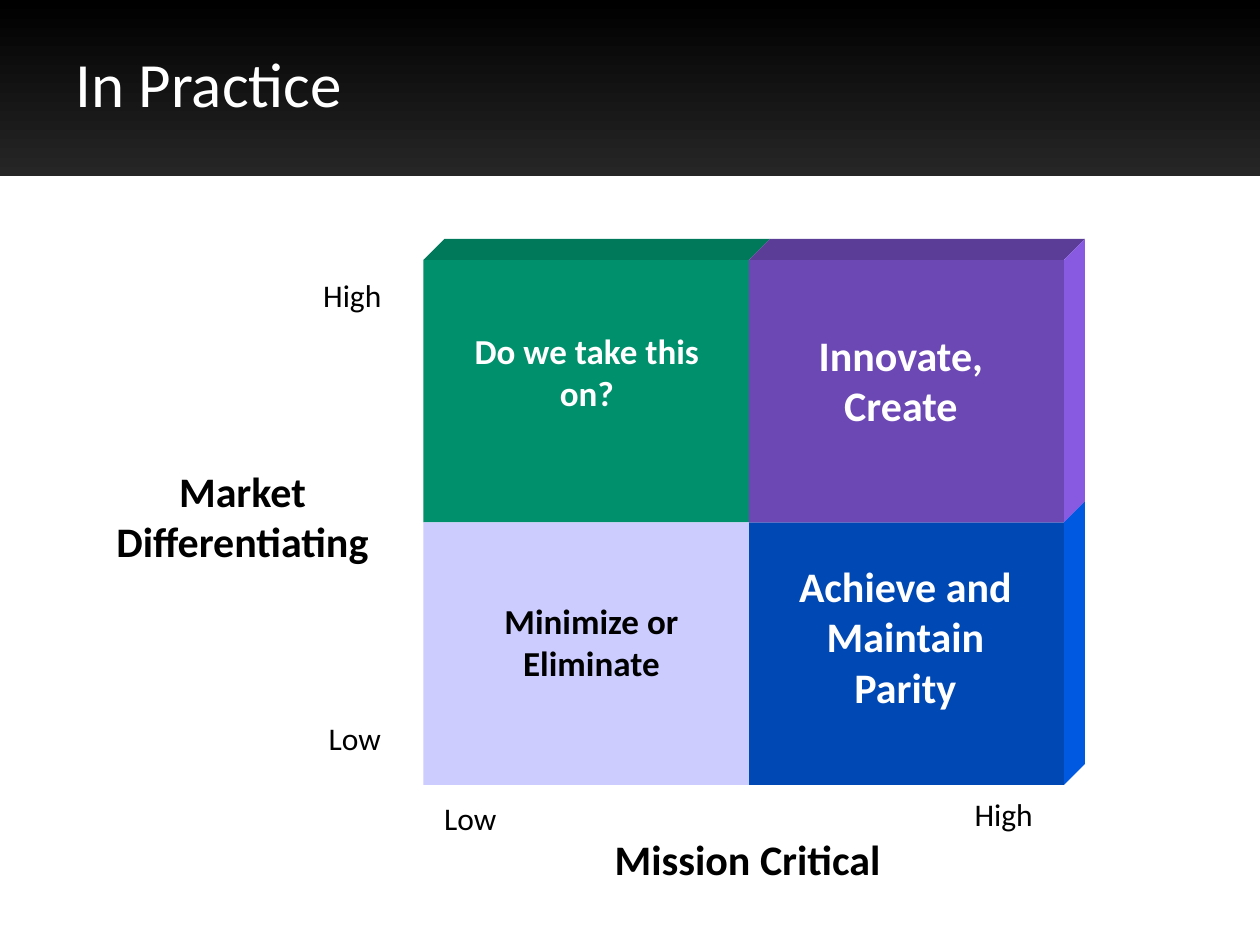
from lxml import etree
from pptx import Presentation
from pptx.dml.color import RGBColor
from pptx.enum.shapes import MSO_SHAPE as SHAPE
from pptx.enum.text import MSO_ANCHOR as ANCHOR, MSO_AUTO_SIZE as AUTO, PP_ALIGN as ALIGN
from pptx.oxml.ns import qn
from pptx.util import Pt

FONT = "Calibri"
BLACK = RGBColor(0x00, 0x00, 0x00)
WHITE = RGBColor(0xFF, 0xFF, 0xFF)
CHARCOAL = RGBColor(0x26, 0x26, 0x26)
GREEN = RGBColor(0x00, 0x90, 0x6C)
GREEN_TOP = RGBColor(0x00, 0x79, 0x5B)
PURPLE = RGBColor(0x6C, 0x48, 0xB4)
PURPLE_TOP = RGBColor(0x5B, 0x3C, 0x97)
PURPLE_SIDE = RGBColor(0x87, 0x5A, 0xE1)
BLUE = RGBColor(0x00, 0x48, 0xB4)
BLUE_SIDE = RGBColor(0x00, 0x5A, 0xE1)
LILAC = RGBColor(0xCC, 0xCC, 0xFF)

# Matrix edges and depth, in points
LEFT, CENTER, RIGHT = 242, 428, 608
TOP, MIDDLE, BOTTOM = 148.5, 298.5, 448.5
DEPTH = 12


def paint(sp, color):
    sp.shadow.inherit = False
    sp.fill.solid()
    sp.fill.fore_color.rgb = color
    sp.line.fill.background()


def write(tf, lines, size, color, bold, align):
    for i, line in enumerate(lines):
        p = tf.paragraphs[0] if i == 0 else tf.add_paragraph()
        p.alignment = align
        r = p.add_run()
        r.text = line
        r.font.name = FONT
        r.font.size = Pt(size)
        r.font.bold = bold
        r.font.color.rgb = color


prs = Presentation()
prs.slide_width, prs.slide_height = Pt(720), Pt(540)
s = prs.slides.add_slide(prs.slide_layouts[5])

# Title on its dark band
band = s.shapes.add_shape(SHAPE.RECTANGLE, 0, 0, Pt(720), Pt(100.8))
paint(band, BLACK)
band.fill.gradient()
band.fill.gradient_angle = 270
for stop, position, color in zip(band.fill.gradient_stops, (0, 1), (BLACK, CHARCOAL)):
    stop.position = position
    stop.color.rgb = color
s.shapes._spTree.insert(2, band._element)

title = s.shapes.title
title.left, title.top, title.width, title.height = Pt(36), Pt(21.6), Pt(648), Pt(90)
title.text_frame.vertical_anchor = ANCHOR.TOP
title.text_frame.auto_size = AUTO.NONE
write(title.text_frame, ["In Practice"], 36, WHITE, False, ALIGN.LEFT)

# Axis titles on translucent white: left, top, width, height, lines, alignment, opacity %
axis_titles = [
    (50, 262.5, 177.1, 65, ["Market", "Differentiating"], ALIGN.CENTER, 48),
    (344.2, 472.6, 191.5, 36, ["Mission Critical"], ALIGN.LEFT, 41),
]
for x, y, w, h, lines, align, opacity in axis_titles:
    sp = s.shapes.add_shape(SHAPE.RECTANGLE, Pt(x), Pt(y), Pt(w), Pt(h))
    paint(sp, WHITE)
    srgb = sp._element.spPr.find(qn("a:solidFill")).find(qn("a:srgbClr"))
    etree.SubElement(srgb, qn("a:alpha")).set("val", str(opacity * 1000))
    tf = sp.text_frame
    tf.word_wrap = False
    tf.auto_size = AUTO.SHAPE_TO_FIT_TEXT
    tf.vertical_anchor = ANCHOR.TOP
    write(tf, lines, 24, BLACK, True, align)

# Front faces of the four quadrants
quadrants = [
    (LEFT, CENTER, TOP, MIDDLE, GREEN),
    (CENTER, RIGHT, MIDDLE, BOTTOM, BLUE),
    (LEFT, CENTER, MIDDLE, BOTTOM, LILAC),
    (CENTER, RIGHT, TOP, MIDDLE, PURPLE),
]
for x1, x2, y1, y2, color in quadrants:
    face = s.shapes.add_shape(SHAPE.RECTANGLE, Pt(x1), Pt(y1), Pt(x2 - x1), Pt(y2 - y1))
    paint(face, color)

# Receding faces: the front edge swept up and to the right
edges = [
    ((LEFT, TOP), (CENTER, TOP), GREEN_TOP),
    ((CENTER, TOP), (RIGHT, TOP), PURPLE_TOP),
    ((RIGHT, TOP), (RIGHT, MIDDLE), PURPLE_SIDE),
    ((RIGHT, MIDDLE), (RIGHT, BOTTOM), BLUE_SIDE),
]
for (x1, y1), (x2, y2), color in edges:
    builder = s.shapes.build_freeform(Pt(x1), Pt(y1))
    corners = [(x2, y2), (x2 + DEPTH, y2 - DEPTH), (x1 + DEPTH, y1 - DEPTH)]
    builder.add_line_segments([(Pt(x), Pt(y)) for x, y in corners], close=True)
    paint(builder.convert_to_shape(), color)

# Scale ends and quadrant names: left, top, width, height, lines, size, color, bold, align, wrap
labels = [
    (177.6, 154.1, 51.8, 29, ["High"], 18, BLACK, False, ALIGN.LEFT, False),
    (180.7, 407.5, 47.5, 29, ["Low"], 18, BLACK, False, ALIGN.LEFT, False),
    (246.7, 452.9, 47.5, 29, ["Low"], 18, BLACK, False, ALIGN.LEFT, False),
    (549.8, 450.7, 51.8, 29, ["High"], 18, BLACK, False, ALIGN.LEFT, False),
    (460.1, 184.6, 109.4, 65, ["Innovate,", "Create"], 24, WHITE, True, ALIGN.CENTER, False),
    (254, 184.6, 162.7, 55, ["Do we take this on?"], 20, WHITE, True, ALIGN.CENTER, True),
    (266, 339.1, 144, 55, ["Minimize or Eliminate"], 20, BLACK, True, ALIGN.CENTER, True),
    (448.6, 316.8, 137.5, 94, ["Achieve and", "Maintain", "Parity"], 24, WHITE, True,
     ALIGN.CENTER, False),
]
for x, y, w, h, lines, size, color, bold, align, wrap in labels:
    tf = s.shapes.add_textbox(Pt(x), Pt(y), Pt(w), Pt(h)).text_frame
    tf.word_wrap = wrap
    tf.auto_size = AUTO.SHAPE_TO_FIT_TEXT
    write(tf, lines, size, color, bold, align)

prs.save("out.pptx")
